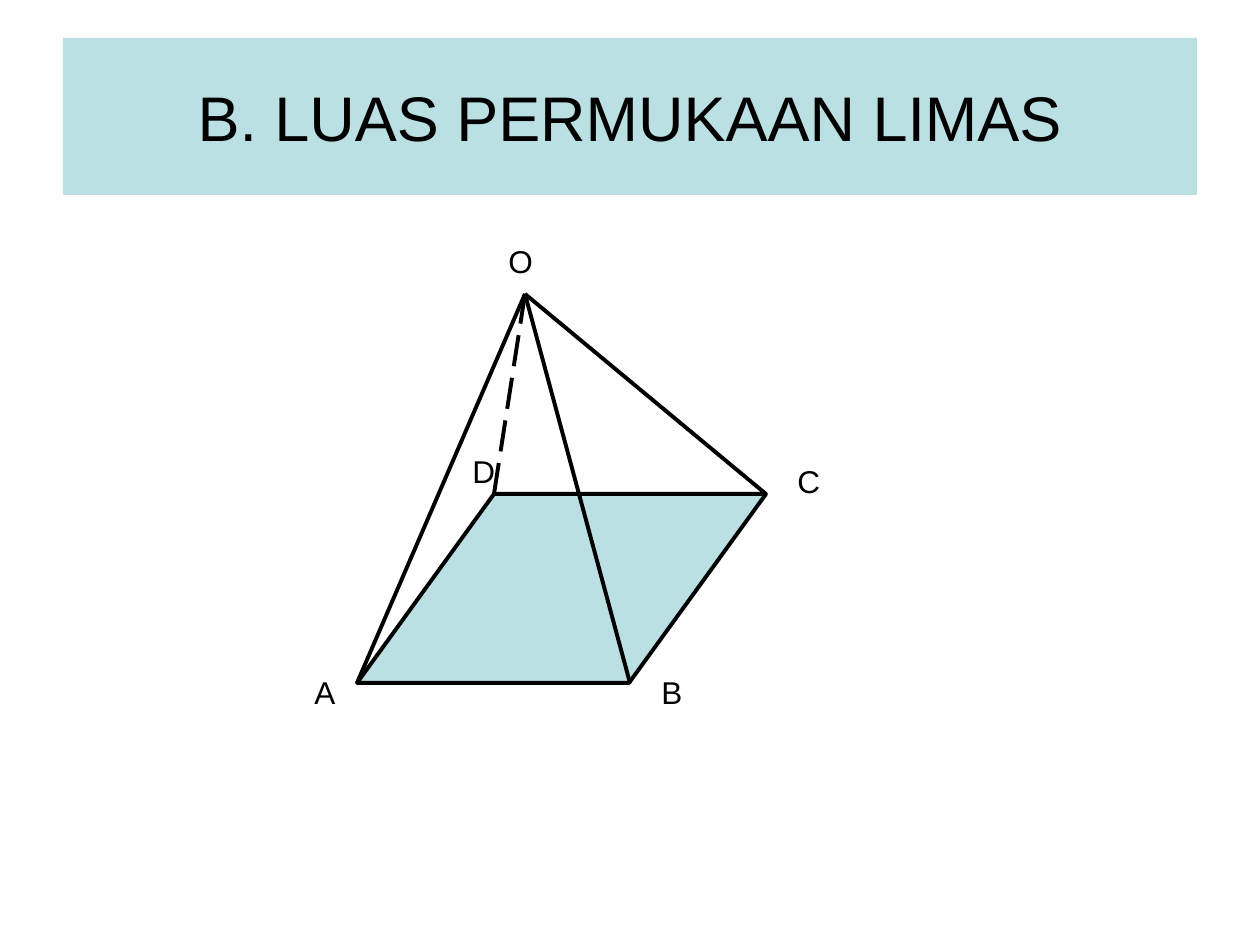
from pptx import Presentation, util as u
from pptx.dml.color import RGBColor
from pptx.enum import dml, shapes, text
from pptx.oxml.ns import qn
from lxml import etree

PX_PER_INCH = 126
BLACK = RGBColor(0x00, 0x00, 0x00)
PALE_TEAL = RGBColor(0xBB, 0xE0, 0xE3)
EDGE_WIDTH = u.Pt(2.25)

# Corners of the pyramid, in px
CORNERS = {"A": (357, 683), "B": (630, 683), "C": (766, 494),
           "D": (494, 494), "O": (525, 294)}
# Top left of each corner's label, in px
LABELS = {"A": (302, 667), "B": (649, 667), "C": (785, 456),
          "D": (460, 446), "O": (496, 236)}


def px(*lengths):
    return [u.Inches(length / PX_PER_INCH) for length in lengths]


def set_format(target, values):
    for name, value in values.items():
        setattr(target, name, value)


def write(shape, words, size, frame_format, align):
    frame = shape.text_frame
    set_format(frame, frame_format)
    para = frame.paragraphs[0]
    para.alignment = align
    span = para.add_run()
    span.text = words
    set_format(span.font, {"name": "Arial", "size": u.Pt(size)})
    span.font.color.rgb = BLACK


def add_filled(page, kind, left, top, width, height):
    shape = page.shapes.add_shape(kind, *px(left, top, width, height))
    shape.shadow.inherit = False
    shape.fill.solid()
    shape.fill.fore_color.rgb = PALE_TEAL
    shape.line.fill.background()
    return shape


def style_edge(line, dash=None):
    line.color.rgb = BLACK
    set_format(line, {"width": EDGE_WIDTH, "dash_style": dash})


def add_title(page, words):
    banner = add_filled(page, shapes.MSO_SHAPE.RECTANGLE, 63, 38, 1134, 157)
    write(banner, words, 36,
          {"word_wrap": True, "vertical_anchor": text.MSO_ANCHOR.MIDDLE},
          text.PP_ALIGN.CENTER)


def add_base(page):
    (left, bottom), (right, top) = CORNERS["A"], CORNERS["C"]
    height = bottom - top
    base = add_filled(page, shapes.MSO_SHAPE.PARALLELOGRAM,
                      left, top, right - left, height)
    base.adjustments[0] = (CORNERS["D"][0] - left) / height
    style_edge(base.line)


def add_edge(page, corner, dash=None):
    edge = page.shapes.add_connector(shapes.MSO_CONNECTOR.STRAIGHT,
                                     *px(*CORNERS[corner], *CORNERS["O"]))
    style_edge(edge.line, dash)
    etree.SubElement(edge._element.spPr, qn("a:effectLst"))


def add_label(page, letter, left, top):
    box = page.shapes.add_textbox(*px(left, top, 48, 50))
    write(box, letter, 18,
          {"word_wrap": False, "auto_size": text.MSO_AUTO_SIZE.SHAPE_TO_FIT_TEXT},
          text.PP_ALIGN.LEFT)


def main():
    deck = Presentation()
    deck.slide_width, deck.slide_height = px(1260, 945)
    page = deck.slides.add_slide(deck.slide_layouts[6])

    add_title(page, "B. LUAS PERMUKAAN LIMAS")

    # Pyramid: base, visible edges, then the hidden edge
    add_base(page)
    for corner in "BCA":
        add_edge(page, corner)
    add_edge(page, "D", dml.MSO_LINE.LONG_DASH)

    # Corner letters
    for letter, place in LABELS.items():
        add_label(page, letter, *place)

    deck.save("out.pptx")


if __name__ == "__main__":
    main()
